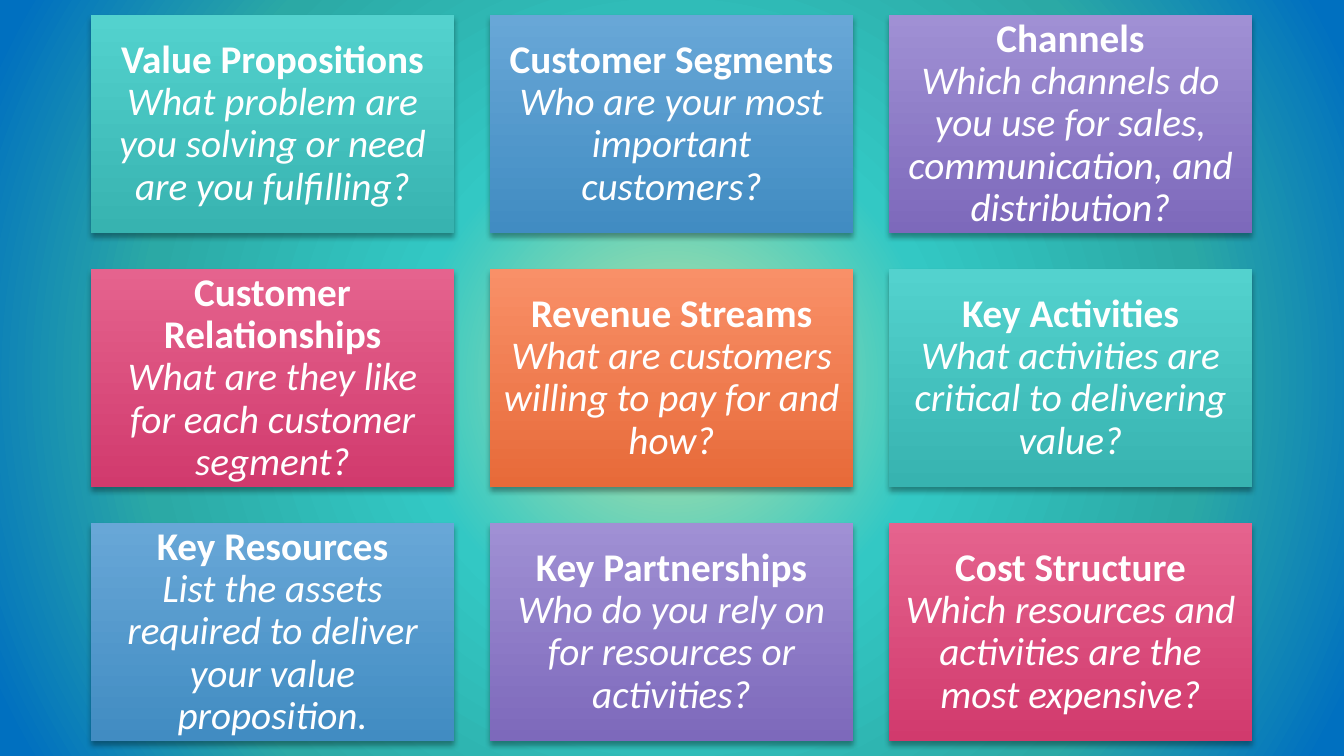
from dataclasses import dataclass

from pptx import Presentation
from pptx.dml.color import RGBColor
from pptx.enum.shapes import MSO_SHAPE as Shape
from pptx.enum.text import MSO_ANCHOR as Anchor, PP_ALIGN as Align
from pptx.oxml import parse_xml
from pptx.oxml.ns import nsdecls
from pptx.util import Pt

WIDTH, HEIGHT = 1344, 756
EMU_PER_PX = 12192000 / WIDTH


def px(length):
    return round(length * EMU_PER_PX)


@dataclass(frozen=True)
class Theme:
    font: str = "Calibri"
    size: int = 28
    text: str = "FFFFFF"
    shadow: str = "000000"
    teal: tuple = ("53D2CE", "37B3B0")
    blue: tuple = ("68A7D7", "418CC2")
    purple: tuple = ("A090D4", "7D69BB")
    pink: tuple = ("E5638E", "D13A6D")
    orange: tuple = ("F99068", "E76A39")
    glow: tuple = ((0, "BFE2A4"), (34, "33C8C4"), (69, "2BA9A5"), (97, "0070C0"))

    @property
    def card_cycle(self):
        return self.teal, self.blue, self.purple, self.pink, self.orange


class CanvasSlide:
    def __init__(self, page, theme):
        self.page = page
        self.theme = theme

    def radial_background(self):
        fill = self.page.background.fill
        fill.gradient()
        stops = "".join(
            f'<a:gs pos="{position * 1000}"><a:srgbClr val="{color}"/></a:gs>'
            for position, color in self.theme.glow
        )
        gradient = parse_xml(
            f'<a:gradFill {nsdecls("a")} rotWithShape="1"><a:gsLst>{stops}</a:gsLst>'
            '<a:path path="circle">'
            '<a:fillToRect l="50000" t="50000" r="50000" b="50000"/>'
            "</a:path></a:gradFill>"
        )
        properties = self.page._element.cSld.bg.bgPr
        properties.replace(properties.eg_fillProperties, gradient)

    def drop_shadow(self, box):
        box.shadow.inherit = False
        box._element.spPr.find("{*}effectLst").append(parse_xml(
            f'<a:outerShdw {nsdecls("a")} blurRad="{Pt(4)}" dist="{Pt(3)}" '
            'dir="5400000" rotWithShape="0">'
            f'<a:srgbClr val="{self.theme.shadow}"><a:alpha val="35000"/></a:srgbClr>'
            "</a:outerShdw>"
        ))

    def card(self, left, top, width, height, colors, heading, question):
        box = self.page.shapes.add_shape(
            Shape.RECTANGLE, px(left), px(top), px(width), px(height))
        box.fill.gradient()
        box.fill.gradient_angle = 270
        for stop, color in zip(box.fill.gradient_stops, colors):
            stop.color.rgb = RGBColor.from_string(color)
        box.line.fill.background()
        self.drop_shadow(box)

        frame = box.text_frame
        frame.word_wrap = True
        frame.vertical_anchor = Anchor.MIDDLE
        frame.margin_left = frame.margin_right = px(12)
        frame.margin_top = frame.margin_bottom = px(12)
        para = frame.paragraphs[0]
        para.alignment = Align.CENTER
        para.line_spacing = 0.9
        para.font.name = self.theme.font
        para.font.size = Pt(self.theme.size)
        para.font.color.rgb = RGBColor.from_string(self.theme.text)
        span = para.add_run()
        span.text = heading
        span.font.bold = True
        para.add_line_break()
        span = para.add_run()
        span.text = question
        span.font.italic = True


CARDS = [
    ("Value Propositions", "What problem are you solving or need are you fulfilling?"),
    ("Customer Segments", "Who are your most important customers?"),
    ("Channels",
     "Which channels do you use for sales, communication, and distribution?"),
    ("Customer Relationships", "What are they like for each customer segment?"),
    ("Revenue Streams", "What are customers willing to pay for and how?"),
    ("Key Activities", "What activities are critical to delivering value?"),
    ("Key Resources", "List the assets required to deliver your value proposition."),
    ("Key Partnerships", "Who do you rely on for resources or activities?"),
    ("Cost Structure", "Which resources and activities are the most expensive?"),
]
COLUMNS = 3
CARD_WIDTH, CARD_HEIGHT, GAP = 363, 218, 36
LEFT = (WIDTH - COLUMNS * CARD_WIDTH - (COLUMNS - 1) * GAP) // 2
TOP = 15


def main():
    deck = Presentation()
    deck.slide_width, deck.slide_height = px(WIDTH), px(HEIGHT)
    theme = Theme()
    canvas = CanvasSlide(deck.slides.add_slide(deck.slide_layouts[6]), theme)
    canvas.radial_background()
    for index, (heading, question) in enumerate(CARDS):
        row, column = divmod(index, COLUMNS)
        colors = theme.card_cycle[index % len(theme.card_cycle)]
        canvas.card(LEFT + column * (CARD_WIDTH + GAP), TOP + row * (CARD_HEIGHT + GAP),
                    CARD_WIDTH, CARD_HEIGHT, colors, heading, question)
    deck.save("out.pptx")


if __name__ == "__main__":
    main()
